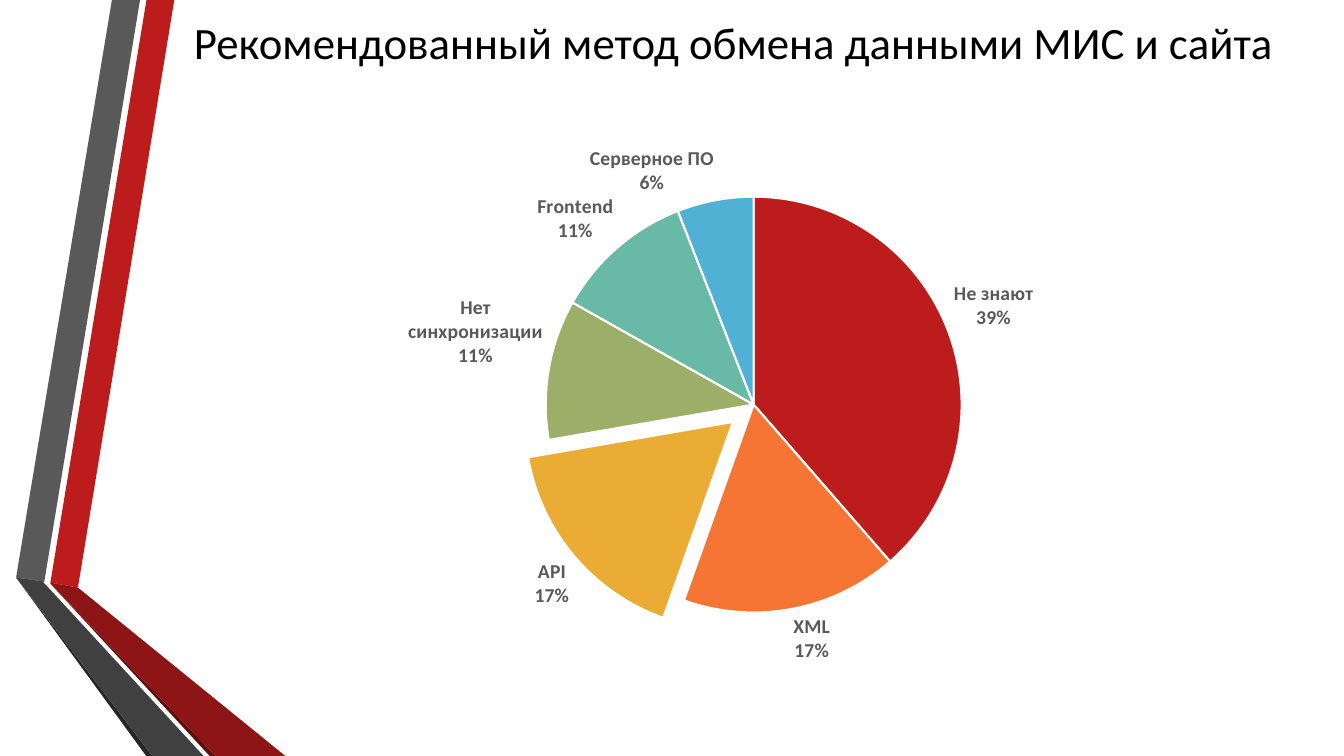
from dataclasses import dataclass

from lxml import etree
from pptx import Presentation
from pptx.chart.data import CategoryChartData
from pptx.dml.color import RGBColor
from pptx.enum.chart import XL_CHART_TYPE, XL_LABEL_POSITION
from pptx.enum.text import MSO_ANCHOR, PP_ALIGN
from pptx.oxml.ns import qn
from pptx.util import Inches, Pt

PIE = XL_CHART_TYPE.PIE
OUTSIDE_END = XL_LABEL_POSITION.OUTSIDE_END
MIDDLE = MSO_ANCHOR.MIDDLE
CENTER = PP_ALIGN.CENTER

WIDTH, HEIGHT = Inches(13.33), Inches(7.5)
FONT = "Calibri"
COLORS = {
    "black": "000000", "white": "FFFFFF", "gray": "595959",
    "charcoal": "404040", "soot": "262626",
    "red": "BC1C1C", "dark_red": "8D1515", "maroon": "5E0E0E",
    "orange": "F67534", "amber": "EAAC35", "olive": "9BAF68",
    "teal": "68B9A6", "blue": "50B1D4",
}


@dataclass(frozen=True)
class Ribbon:
    color: str
    points: tuple[tuple[float, float], ...]  # percent of slide width, height


@dataclass(frozen=True)
class Slice:
    label: str
    value: int
    color: str
    explosion: int = 0  # percent of the radius


@dataclass(frozen=True)
class Box:
    left: float  # all four in percent of the slide
    top: float
    width: float
    height: float

    def emu(self) -> tuple[int, int, int, int]:
        return (across(self.left), down(self.top),
                across(self.width), down(self.height))


RIBBONS = (
    Ribbon("red", ((3.75, 77.07), (5.8, 77.73), (12.97, 0), (10.9, 0))),
    Ribbon("gray", ((10.42, 0), (8.33, 0), (1.2, 76.4), (3.3, 76.93))),
    Ribbon("soot", ((1.2, 76.4), (10.88, 100), (11.33, 100))),
    Ribbon("maroon", ((3.75, 77.2), (15.6, 100), (16.05, 100))),
    Ribbon("dark_red", ((3.75, 77.2), (16.05, 100), (21.23, 100),
                        (5.8, 77.73), (3.75, 77.07))),
    Ribbon("charcoal", ((15.15, 100), (3.6, 77.73), (3.23, 77.07),
                        (3.3, 76.93), (1.2, 76.4), (11.33, 100))),
)
SLICES = (
    Slice("Не знают", 39, "red"),
    Slice("XML", 17, "orange"),
    Slice("API", 17, "amber", explosion=13),
    Slice("Нет синхронизации", 11, "olive"),
    Slice("Frontend", 11, "teal"),
    Slice("Серверное ПО", 6, "blue"),
)
TITLE_BOX = Box(13.5, 0, 82.2, 11.07)
CHART_BOX = Box(26.03, 15.33, 55.65, 76.4)
PLOT_SHARES = {"x": 0.26, "y": 0.14, "w": 0.56, "h": 0.72}  # of the chart


def across(percent: float) -> int:
    return round(WIDTH * percent / 100)


def down(percent: float) -> int:
    return round(HEIGHT * percent / 100)


def rgb(name: str) -> RGBColor:
    return RGBColor.from_string(COLORS[name])


def style_font(font, *, size: float, color: str, bold: bool = False) -> None:
    font.name, font.size, font.bold = FONT, Pt(size), bold
    font.color.rgb = rgb(color)


def add_text(slide, text: str, box: Box, *, size: float, color: str,
             align=CENTER, anchor=MIDDLE) -> None:
    tf = slide.shapes.add_textbox(*box.emu()).text_frame
    tf.word_wrap = True
    tf.margin_left = tf.margin_right = 0
    tf.vertical_anchor = anchor
    p = tf.paragraphs[0]
    p.alignment = align
    r = p.add_run()
    r.text = text
    style_font(r.font, size=size, color=color)


def add_ribbon(slide, ribbon: Ribbon) -> None:
    start, *rest = [(across(x), down(y)) for x, y in ribbon.points]
    builder = slide.shapes.build_freeform(*start)
    builder.add_line_segments(rest, close=True)
    sp = builder.convert_to_shape()
    sp.shadow.inherit = False
    sp.fill.solid()
    sp.fill.fore_color.rgb = rgb(ribbon.color)
    sp.line.fill.background()


def set_plot_layout(chart, shares: dict[str, float]) -> None:
    area = chart.plots[0]._element.getparent()
    for old in area.findall(qn("c:layout")):
        area.remove(old)
    layout = etree.Element(qn("c:layout"))
    manual = etree.SubElement(layout, qn("c:manualLayout"))
    settings = {"layoutTarget": "inner", "xMode": "edge", "yMode": "edge"}
    for tag, value in (settings | shares).items():
        etree.SubElement(manual, qn(f"c:{tag}")).set("val", str(value))
    area.insert(0, layout)


def add_pie(slide, slices: tuple[Slice, ...], box: Box) -> None:
    data = CategoryChartData()
    data.categories = [s.label for s in slices]
    data.add_series("Series 1", [s.value for s in slices])
    chart = slide.shapes.add_chart(PIE, *box.emu(), data).chart
    chart.has_legend = chart.has_title = False
    style_font(chart.font, size=10, color="black")
    set_plot_layout(chart, PLOT_SHARES)

    # Slice colours and the pulled-out slice
    plot = chart.plots[0]
    plot.vary_by_categories = True
    series = plot.series[0]
    for i, item in enumerate(slices):
        fmt = series.points[i].format
        fmt.fill.solid()
        fmt.fill.fore_color.rgb = rgb(item.color)
        fmt.line.color.rgb = rgb("white")
        fmt.line.width = Pt(1.5)
        if item.explosion:
            dpt = series._element.findall(qn("c:dPt"))[-1]
            explosion = etree.Element(qn("c:explosion"))
            explosion.set("val", str(item.explosion))
            dpt.find(qn("c:spPr")).addprevious(explosion)

    # Category above percentage
    plot.has_data_labels = True
    labels = plot.data_labels
    labels.show_value = False
    labels.show_category_name = labels.show_percentage = True
    labels.number_format, labels.number_format_is_linked = "0%", False
    labels.position = OUTSIDE_END
    style_font(labels.font, size=14, color="gray", bold=True)
    separator = etree.Element(qn("c:separator"))
    separator.text = "\n"
    last_flag = labels._element.find(qn("c:showBubbleSize"))
    if last_flag is None:
        last_flag = labels._element.find(qn("c:showPercent"))
    last_flag.addnext(separator)


def main() -> None:
    prs = Presentation()
    prs.slide_width, prs.slide_height = WIDTH, HEIGHT
    slide = prs.slides.add_slide(prs.slide_layouts[6])

    # Folded ribbons on the left
    for ribbon in RIBBONS:
        add_ribbon(slide, ribbon)

    # Title and chart
    add_text(slide, "Рекомендованный метод обмена данными МИС и сайта",
             TITLE_BOX, size=32, color="black")
    add_pie(slide, SLICES, CHART_BOX)
    prs.save("out.pptx")


if __name__ == "__main__":
    main()
